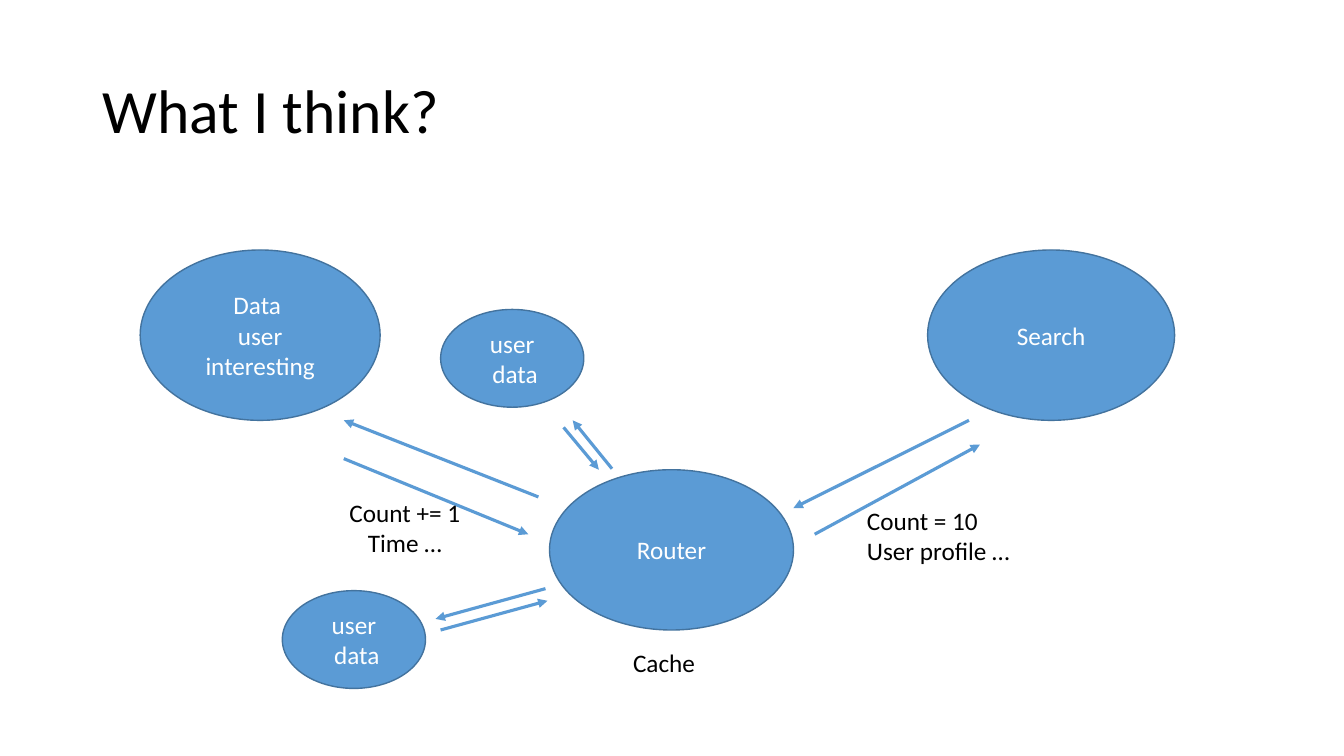
from lxml import etree
from pptx import Presentation
from pptx import util as u
from pptx.dml.color import RGBColor
from pptx.enum import shapes, text
from pptx.oxml.ns import qn

THEME = {
    "font": "Calibri",
    "fill": RGBColor.from_string("5B9BD5"),
    "outline": RGBColor.from_string("43739E"),
    "light": RGBColor.from_string("FFFFFF"),
    "dark": RGBColor.from_string("000000"),
    "title_size": u.Pt(44),
    "body_size": u.Pt(18),
    "outline_width": u.Pt(1),
    "arrow_width": u.Pt(2.25),
}
LEFT, CENTER = text.PP_ALIGN.LEFT, text.PP_ALIGN.CENTER
TOP, MIDDLE = text.MSO_ANCHOR.TOP, text.MSO_ANCHOR.MIDDLE


def write_text(shape, lines, color, align, anchor, size=THEME["body_size"], spacing=1.0):
    frame = shape.text_frame
    frame.word_wrap = True
    frame.vertical_anchor = anchor
    frame.text = "\n".join(lines)
    for paragraph in frame.paragraphs:
        paragraph.alignment = align
        paragraph.line_spacing = spacing
        font = paragraph.runs[0].font
        for name, value in {"name": THEME["font"], "size": size}.items():
            setattr(font, name, value)
        font.color.rgb = color


presentation = Presentation()
presentation.slide_width = u.Inches(13.33)
presentation.slide_height = u.Inches(7.5)
slide = presentation.slides.add_slide(presentation.slide_layouts[6])

title = slide.shapes.add_textbox(*map(u.Inches, (0.92, 0.4, 11.5, 1.45)))
write_text(title, ["What I think?"], THEME["dark"], LEFT, MIDDLE, THEME["title_size"], 0.9)

# Nodes: left, top, width, height, lines
nodes = [
    (1.39, 2.48, 2.38, 1.69, ["Data ", "user interesting"]),
    (5.45, 4.66, 2.42, 1.59, ["Router"]),
    (9.2, 2.48, 2.45, 1.69, ["Search"]),
    (4.37, 3.07, 1.42, 0.97, ["user", " data"]),
    (2.8, 5.86, 1.42, 0.97, ["user", " data"]),
]
for *box, lines in nodes:
    node = slide.shapes.add_shape(shapes.MSO_SHAPE.OVAL, *map(u.Inches, box))
    node.shadow.inherit = False
    node.fill.solid()
    node.fill.fore_color.rgb = THEME["fill"]
    node.line.color.rgb = THEME["outline"]
    node.line.width = THEME["outline_width"]
    write_text(node, lines, THEME["light"], CENTER, MIDDLE)

# Arrows between the router and each node: from x, y, to x, y
arrows = [
    (9.61, 4.17, 7.87, 5.04),
    (8.08, 5.3, 9.72, 4.41),
    (5.34, 4.93, 3.41, 4.17),
    (3.41, 4.55, 5.24, 5.3),
    (5.59, 4.24, 5.94, 4.66),
    (6.07, 4.65, 5.68, 4.17),
    (5.41, 5.84, 4.32, 6.14),
    (4.37, 6.25, 5.43, 5.96),
]
for ends in arrows:
    arrow = slide.shapes.add_connector(shapes.MSO_CONNECTOR.STRAIGHT, *map(u.Inches, ends))
    arrow.line.color.rgb = THEME["fill"]
    arrow.line.width = THEME["arrow_width"]
    etree.SubElement(arrow.line._get_or_add_ln(), qn("a:tailEnd"), type="triangle")
    etree.SubElement(arrow._element.spPr, qn("a:effectLst"))

# Labels: left, top, width, height, lines, alignment
labels = [
    (8.5, 4.96, 1.95, 0.71, ["Count = 10", "User profile …"], LEFT),
    (3.24, 4.88, 1.55, 0.71, ["Count += 1", "Time …"], CENTER),
    (6.18, 6.37, 1.08, 0.41, ["Cache"], LEFT),
]
for *box, lines, align in labels:
    label = slide.shapes.add_textbox(*map(u.Inches, box))
    write_text(label, lines, THEME["dark"], align, TOP)
    label.text_frame.auto_size = text.MSO_AUTO_SIZE.SHAPE_TO_FIT_TEXT

presentation.save("out.pptx")
